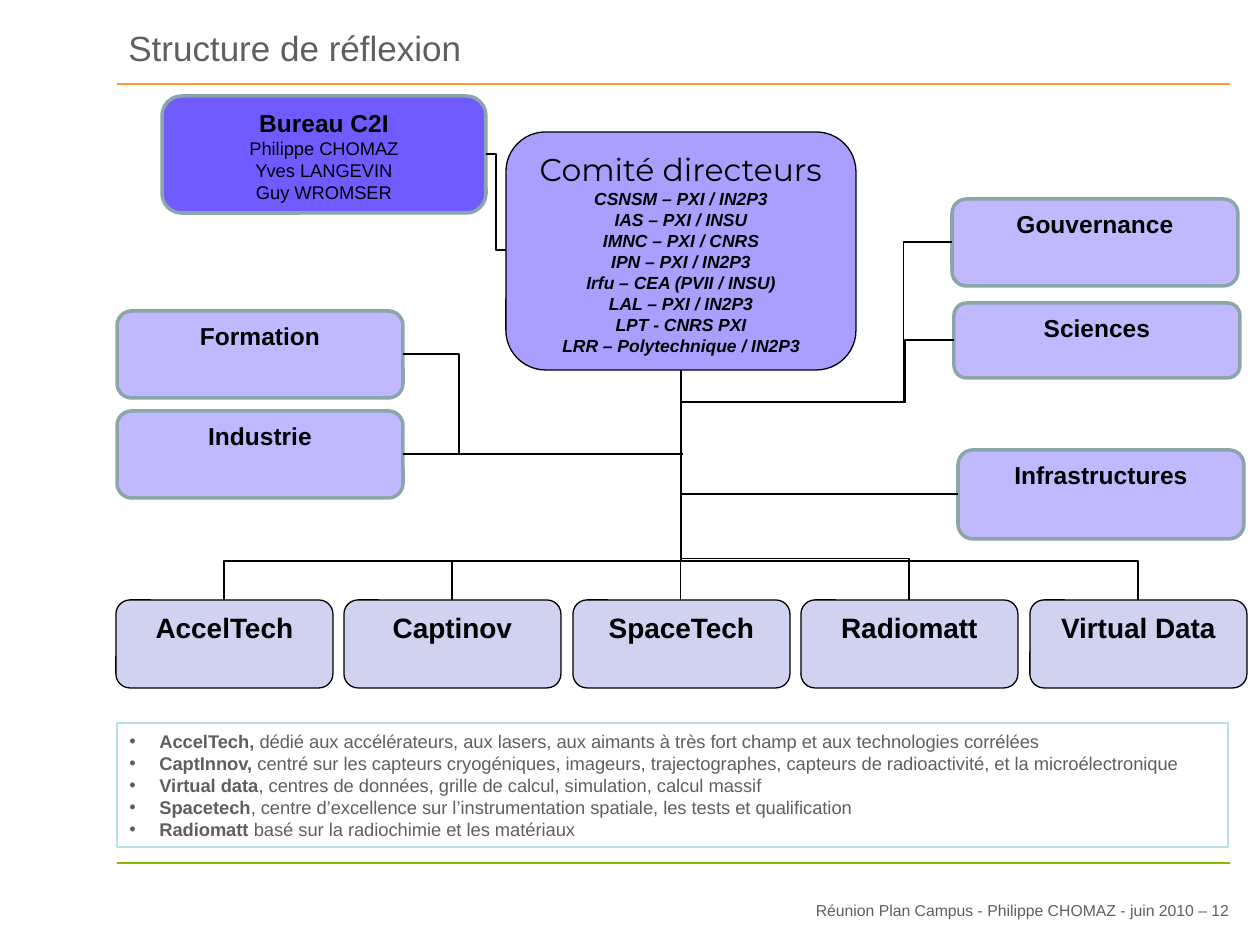
from lxml import etree
from pptx import Presentation
from pptx.dml.color import RGBColor
from pptx.enum.shapes import MSO_CONNECTOR, MSO_SHAPE
from pptx.enum.text import MSO_ANCHOR, PP_ALIGN
from pptx.oxml.ns import qn
from pptx.util import Pt

ELBOW, LINE = MSO_CONNECTOR.ELBOW, MSO_CONNECTOR.STRAIGHT
RECT, ROUND = MSO_SHAPE.RECTANGLE, MSO_SHAPE.ROUNDED_RECTANGLE
LEFT, CENTER, RIGHT = PP_ALIGN.LEFT, PP_ALIGN.CENTER, PP_ALIGN.RIGHT
TOP, MIDDLE, BOTTOM = MSO_ANCHOR.TOP, MSO_ANCHOR.MIDDLE, MSO_ANCHOR.BOTTOM

BLACK = RGBColor(0x00, 0x00, 0x00)
GRAY = RGBColor(0x5F, 0x5F, 0x5F)
ORANGE = RGBColor(0xFF, 0x99, 0x33)
GREEN = RGBColor(0x88, 0xB8, 0x00)
TEAL = RGBColor(0x8A, 0xA6, 0xA8)
SKY = RGBColor(0xBB, 0xE0, 0xE3)
VIOLET = RGBColor(0x6F, 0x5B, 0xFF)
LILAC = RGBColor(0xAA, 0x9F, 0xFF)
MAUVE = RGBColor(0xC1, 0xB9, 0xFF)
PALE = RGBColor(0xD1, 0xD1, 0xF0)

# Boxes as left, top, width, height
BUREAU = (162, 96, 324, 117)
BOARD = (506, 132, 350, 238)
GROUPS = {
    "Formation": (117, 311, 286, 87),
    "Industrie": (117, 411, 286, 87),
    "Gouvernance": (952, 199, 286, 87),
    "Sciences": (954, 303, 286, 75),
    "Infrastructures": (958, 450, 286, 89),
}
TECHS = ["AccelTech", "Captinov", "SpaceTech", "Radiomatt", "Virtual Data"]
HEADS = ["Philippe CHOMAZ", "Yves LANGEVIN", "Guy WROMSER"]
LABS = ["CSNSM – PXI / IN2P3", "IAS – PXI / INSU", "IMNC – PXI / CNRS",
        "IPN – PXI / IN2P3", "Irfu – CEA (PVII / INSU)", "LAL – PXI / IN2P3",
        "LPT - CNRS PXI", "LRR – Polytechnique / IN2P3"]
NOTES = [
    ("AccelTech,", " dédié aux accélérateurs, aux lasers, aux aimants à très fort"
     " champ et aux technologies corrélées"),
    ("CaptInnov,", " centré sur les capteurs cryogéniques, imageurs, trajectographes,"
     " capteurs de radioactivité, et la microélectronique"),
    ("Virtual data", ", centres de données, grille de calcul, simulation, calcul massif"),
    ("Spacetech", ", centre d’excellence sur l’instrumentation spatiale, les tests et"
     " qualification"),
    ("Radiomatt", " basé sur la radiochimie et les matériaux"),
]


def px(n):
    return round(n * 914400 / 126)


def style(para, size, color=BLACK, bold=False, italic=False, face="Arial", align=CENTER):
    para.alignment = align
    font = para.font
    font.name, font.size, font.bold, font.italic = face, Pt(size), bold, italic
    font.color.rgb = color


def write(frame, rows):
    """Fill a frame with (text, style options) rows."""
    for i, (text, opts) in enumerate(rows):
        para = frame.paragraphs[0] if i == 0 else frame.add_paragraph()
        para.add_run().text = text
        style(para, **opts)


def panel(slide, box, kind, fill, edge, width, wrap=True, anchor=TOP):
    shape = slide.shapes.add_shape(kind, *map(px, box))
    shape.shadow.inherit = False
    if fill is None:
        shape.fill.background()
    else:
        shape.fill.solid()
        shape.fill.fore_color.rgb = fill
    shape.line.color.rgb = edge
    shape.line.width = Pt(width)
    shape.text_frame.word_wrap = wrap
    shape.text_frame.vertical_anchor = anchor
    return shape


def label(slide, box, text, **opts):
    frame = slide.shapes.add_textbox(*map(px, box)).text_frame
    frame.word_wrap = True
    write(frame, [(text, opts)])
    return frame


def line(slide, kind, ends, color, width):
    conn = slide.shapes.add_connector(kind, *map(px, ends))
    conn.line.color.rgb = color
    conn.line.width = Pt(width)
    etree.SubElement(conn._element.spPr, qn("a:effectLst"))
    return conn


def link(slide, start, end, bends, *adj, down=True):
    """Elbow from start to end, leaving downward or sideways."""
    (x, y), (u, v) = start, end
    dx, dy = u - x, v - y
    if down:
        wide, high = abs(dy), abs(dx)
        turn = 90 if dx < 0 or dy < 0 else 270
        flips = dx >= 0, dy < 0
    else:
        wide, high = abs(dx), abs(dy)
        turn = 180 if dx < 0 else 0
        flips = False, dy < 0 < dx
    left, top = (x + u - wide) / 2, (y + v - high) / 2
    conn = line(slide, ELBOW, (left, top, left + wide, top + high), BLACK, 0.75)
    props = conn._element.spPr
    form = props.find(qn("a:xfrm"))
    form.set("rot", str(turn * 60000))
    for key, flip in zip(("flipH", "flipV"), flips):
        if flip:
            form.set(key, "1")
    geom = props.find(qn("a:prstGeom"))
    geom.set("prst", f"bentConnector{bends}")
    guides = geom.find(qn("a:avLst"))
    for i, part in enumerate(adj, 1):
        etree.SubElement(guides, qn("a:gd"), name=f"adj{i}",
                         fmla=f"val {round(part * 100000)}")


def frame_page(slide):
    # Title, rules and footer
    label(slide, (116, 20, 1120, 66), "Structure de réflexion",
          size=20, color=GRAY, align=LEFT)
    for y, color in ((84, ORANGE), (863, GREEN)):
        line(slide, LINE, (117, y, 1230, y), color, 1.5)
    foot = label(slide, (499, 878, 730, 42),
                 "Réunion Plan Campus - Philippe CHOMAZ - juin 2010 – 12",
                 size=9, color=GRAY, align=RIGHT)
    foot.margin_left = foot.margin_right = foot.margin_top = foot.margin_bottom = 0
    foot.vertical_anchor = BOTTOM


def draw_top(slide):
    # Bureau and steering committee
    bureau = panel(slide, BUREAU, ROUND, VIOLET, TEAL, 2)
    write(bureau.text_frame, [("Bureau C2I", dict(size=14, bold=True))]
          + [(name, dict(size=10.5)) for name in HEADS])
    board = panel(slide, BOARD, ROUND, LILAC, BLACK, 0.75, wrap=False)
    write(board.text_frame, [("Comité directeurs", dict(size=18, face="Montserrat"))]
          + [(lab, dict(size=10, bold=True, italic=True)) for lab in LABS])
    link(slide, (486, 154), (506, 250), 3, 0.5, down=False)


def draw_groups(slide, hub):
    # Working groups on both sides
    mid = {}
    for name, box in GROUPS.items():
        shape = panel(slide, box, ROUND, MAUVE, TEAL, 2)
        write(shape.text_frame, [(name, dict(size=14, bold=True))])
        x, y, w, h = box
        mid[name] = (x if x > hub[0] else x + w, y + h // 2)
    link(slide, hub, mid["Gouvernance"], 4, -0.25, 0.82)
    link(slide, hub, mid["Sciences"], 4, -1.09, 0.82)
    link(slide, hub, mid["Infrastructures"], 2)
    link(slide, mid["Industrie"], hub, 2, down=False)
    link(slide, (683, mid["Industrie"][1]), mid["Formation"], 3, 0.8, down=False)


def draw_techs(slide, box, hub):
    # Row of platforms, evenly spread
    left, top, wide, high = box
    cell = 217
    for i, name in enumerate(TECHS):
        x = left + (wide - cell) * i // (len(TECHS) - 1)
        shape = panel(slide, (x, top, cell, high), ROUND, PALE, BLACK, 0.75, wrap=False)
        shape.adjustments[0] = 0.16
        write(shape.text_frame, [(name, dict(size=16, bold=True))])
        end = hub[0] if i == 2 else x + cell // 2
        link(slide, hub, (end, top), 3, 0.82 if name == "Radiomatt" else 0.83)


def draw_notes(slide, box):
    # Bulleted descriptions
    frame = panel(slide, box, RECT, None, SKY, 0.75, anchor=MIDDLE).text_frame
    for i, (head, rest) in enumerate(NOTES):
        para = frame.paragraphs[0] if i == 0 else frame.add_paragraph()
        props = para._p.get_or_add_pPr()
        props.set("marL", str(px(30)))
        props.set("indent", str(-px(30)))
        etree.SubElement(props, qn("a:buFont"), typeface="Arial")
        etree.SubElement(props, qn("a:buChar"), char="•")
        style(para, 10.5, GRAY, align=LEFT)
        for text, bold in ((head, True), (rest, False)):
            run = para.add_run()
            run.text = text
            run.font.bold = bold


def main():
    deck = Presentation()
    deck.slide_width, deck.slide_height = px(1260), px(945)
    slide = deck.slides.add_slide(deck.slide_layouts[6])
    hub = (BOARD[0] + BOARD[2] // 2, BOARD[1] + BOARD[3])
    frame_page(slide)
    draw_notes(slide, (117, 723, 1111, 124))
    draw_top(slide)
    draw_techs(slide, (116, 600, 1131, 88), hub)
    draw_groups(slide, hub)
    deck.save("out.pptx")


if __name__ == "__main__":
    main()
